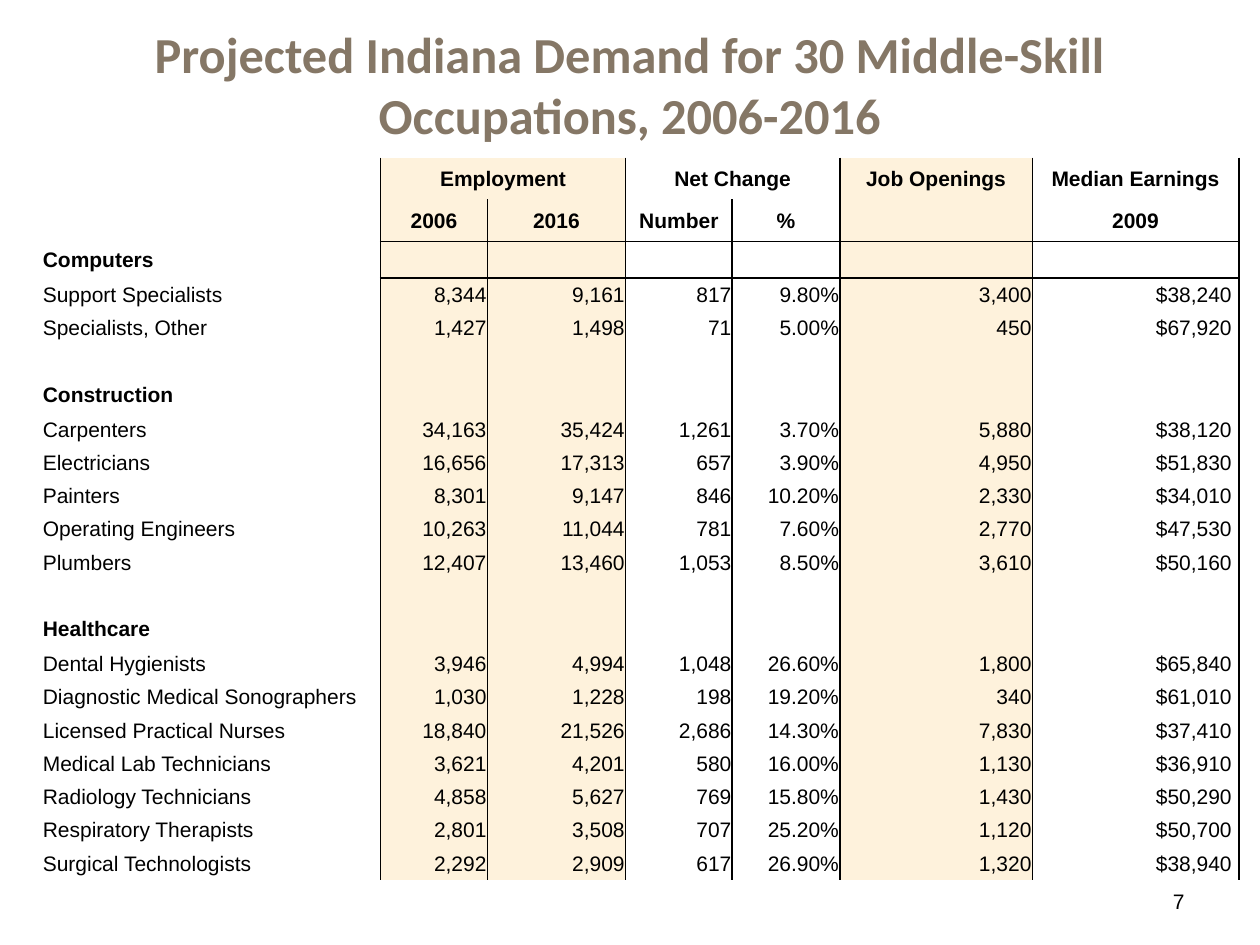
from typing import NamedTuple

from lxml.etree import SubElement
from pptx import Presentation
from pptx.dml.color import RGBColor
from pptx.enum.text import MSO_ANCHOR, MSO_AUTO_SIZE, PP_ALIGN
from pptx.oxml.ns import qn
from pptx.util import Pt

PX = 914400 // 144
COLORS = {"title": "857766", "text": "000000", "line": "000000", "band": "FEF2DC"}
PLAIN = {"name": "Arial", "size": Pt(12), "bold": False}
BOLD = PLAIN | {"bold": True}
HEAD = {"name": "Calibri", "size": Pt(28.8), "bold": True}
NO_STYLE = "{2D5ABB26-0587-4C30-8999-92F81FD0307C}"

COLS = (387, 122, 158, 122, 123, 220, 236)
HIGH = {"head": 48, "group": 42, "gap": 36, "job": 38}
BANDS = {1, 2, 5}
LEFTS = {1, 3, 5, 6}
RIGHTS = {2, 4, 5, 6}


class Row(NamedTuple):
    kind: str
    cells: tuple[str, ...] = ()


class Job(NamedTuple):
    name: str
    old: str
    new: str
    change: str
    rate: str
    open: str
    pay: str


GROUPS = {
    "Computers": (
        Job("Support Specialists", "8,344", "9,161", "817", "9.80%", "3,400", "$38,240"),
        Job("Specialists, Other", "1,427", "1,498", "71", "5.00%", "450", "$67,920"),
    ),
    "Construction": (
        Job("Carpenters", "34,163", "35,424", "1,261", "3.70%", "5,880", "$38,120"),
        Job("Electricians", "16,656", "17,313", "657", "3.90%", "4,950", "$51,830"),
        Job("Painters", "8,301", "9,147", "846", "10.20%", "2,330", "$34,010"),
        Job("Operating Engineers", "10,263", "11,044", "781", "7.60%", "2,770", "$47,530"),
        Job("Plumbers", "12,407", "13,460", "1,053", "8.50%", "3,610", "$50,160"),
    ),
    "Healthcare": (
        Job("Dental Hygienists", "3,946", "4,994", "1,048", "26.60%", "1,800", "$65,840"),
        Job("Diagnostic Medical Sonographers", "1,030", "1,228", "198", "19.20%", "340", "$61,010"),
        Job("Licensed Practical Nurses", "18,840", "21,526", "2,686", "14.30%", "7,830", "$37,410"),
        Job("Medical Lab Technicians", "3,621", "4,201", "580", "16.00%", "1,130", "$36,910"),
        Job("Radiology Technicians", "4,858", "5,627", "769", "15.80%", "1,430", "$50,290"),
        Job("Respiratory Therapists", "2,801", "3,508", "707", "25.20%", "1,120", "$50,700"),
        Job("Surgical Technologists", "2,292", "2,909", "617", "26.90%", "1,320", "$38,940"),
    ),
}


def list_rows() -> list[Row]:
    rows = [
        Row("head", ("", "Employment", "", "Net Change", "", "Job Openings", "Median Earnings")),
        Row("head", ("", "2006", "2016", "Number", "%", "", "2009")),
    ]
    for name, jobs in GROUPS.items():
        if rows[-1].kind == "job":
            rows.append(Row("gap"))
        rows.append(Row("group", (name,)))
        rows += [Row("job", job) for job in jobs]
    return rows


def place(shape, left: int, top: int, width: int, height: int) -> None:
    box = {"left": left, "top": top, "width": width, "height": height}
    for key, size in box.items():
        setattr(shape, key, size * PX)


def write(para, text: str, font: dict, align: PP_ALIGN, color: str = "text") -> None:
    para.alignment = align
    if not text:
        # An empty cell keeps the small size, so its row stays low.
        SubElement(para._p, qn("a:endParaRPr"), sz=str(int(font["size"].pt * 100)))
        return
    run = para.add_run()
    run.text = text
    for key, value in font.items():
        setattr(run.font, key, value)
    run.font.color.rgb = RGBColor.from_string(COLORS[color])


def rule(cell, sides: str) -> None:
    """Draw a 1 pt border on each named side, in L, R, T, B order."""
    props = cell._tc.get_or_add_tcPr()
    for side in sides:
        line = SubElement(props, qn(f"a:ln{side}"), w=str(Pt(1)))
        fill = SubElement(line, qn("a:solidFill"))
        SubElement(fill, qn("a:srgbClr"), val=COLORS["line"])


def draw_cell(cell, kind: str, text: str, row: int, col: int) -> None:
    last = col == len(COLS) - 1
    pad = 8 if last and kind == "job" else 1
    form = {
        "margin_left": PX, "margin_right": pad * PX, "margin_top": PX,
        "margin_bottom": 0, "vertical_anchor": MSO_ANCHOR.MIDDLE,
    }
    for key, value in form.items():
        setattr(cell, key, value)
    sides = {
        "L": col in LEFTS, "R": col in RIGHTS,
        "T": row == 2 and col > 0, "B": row == 1 and col > 0,
    }
    rule(cell, "".join(side for side, on in sides.items() if on))
    if col in BANDS:
        cell.fill.solid()
        cell.fill.fore_color.rgb = RGBColor.from_string(COLORS["band"])
    else:
        cell.fill.background()
    if kind == "head":
        align = PP_ALIGN.CENTER
    else:
        align = PP_ALIGN.RIGHT if col else PP_ALIGN.LEFT
    font = PLAIN if kind == "job" else BOLD
    write(cell.text_frame.paragraphs[0], text, font, align)


def draw_table(slide, rows: list[Row]) -> None:
    highs = [HIGH[row.kind] for row in rows]
    box = (48, 180, sum(COLS), sum(highs))
    frame = slide.shapes.add_table(len(rows), len(COLS), *(n * PX for n in box))
    table = frame.table
    table.first_row = table.horz_banding = False
    table._tbl.tblPr.find(qn("a:tableStyleId")).text = NO_STYLE
    for col, width in zip(table.columns, COLS):
        col.width = width * PX
    for r, row in enumerate(rows):
        table.rows[r].height = highs[r] * PX
        for c in range(len(COLS)):
            text = row.cells[c] if c < len(row.cells) else ""
            draw_cell(table.cell(r, c), row.kind, text, r, c)
    for c in (1, 3):
        table.cell(0, c).merge(table.cell(0, c + 1))


def draw_title(slide, text: str) -> None:
    title = slide.shapes.title
    place(title, 72, 24, 1296, 144)
    frame = title.text_frame
    frame.auto_size = MSO_AUTO_SIZE.NONE
    frame.vertical_anchor = MSO_ANCHOR.MIDDLE
    write(frame.paragraphs[0], text, HEAD, PP_ALIGN.CENTER, "title")


def draw_number(slide, text: str) -> None:
    box = slide.shapes.add_textbox(*(n * PX for n in (1032, 1001, 336, 58)))
    frame = box.text_frame
    frame.word_wrap = True
    frame.vertical_anchor = MSO_ANCHOR.MIDDLE
    write(frame.paragraphs[0], text, PLAIN, PP_ALIGN.RIGHT)


def main() -> None:
    deck = Presentation()
    deck.slide_width, deck.slide_height = 1440 * PX, 1080 * PX
    slide = deck.slides.add_slide(deck.slide_layouts[5])
    draw_title(slide, "Projected Indiana Demand for 30 Middle-Skill Occupations, 2006-2016")
    draw_table(slide, list_rows())
    draw_number(slide, "7")
    deck.save("out.pptx")


if __name__ == "__main__":
    main()
